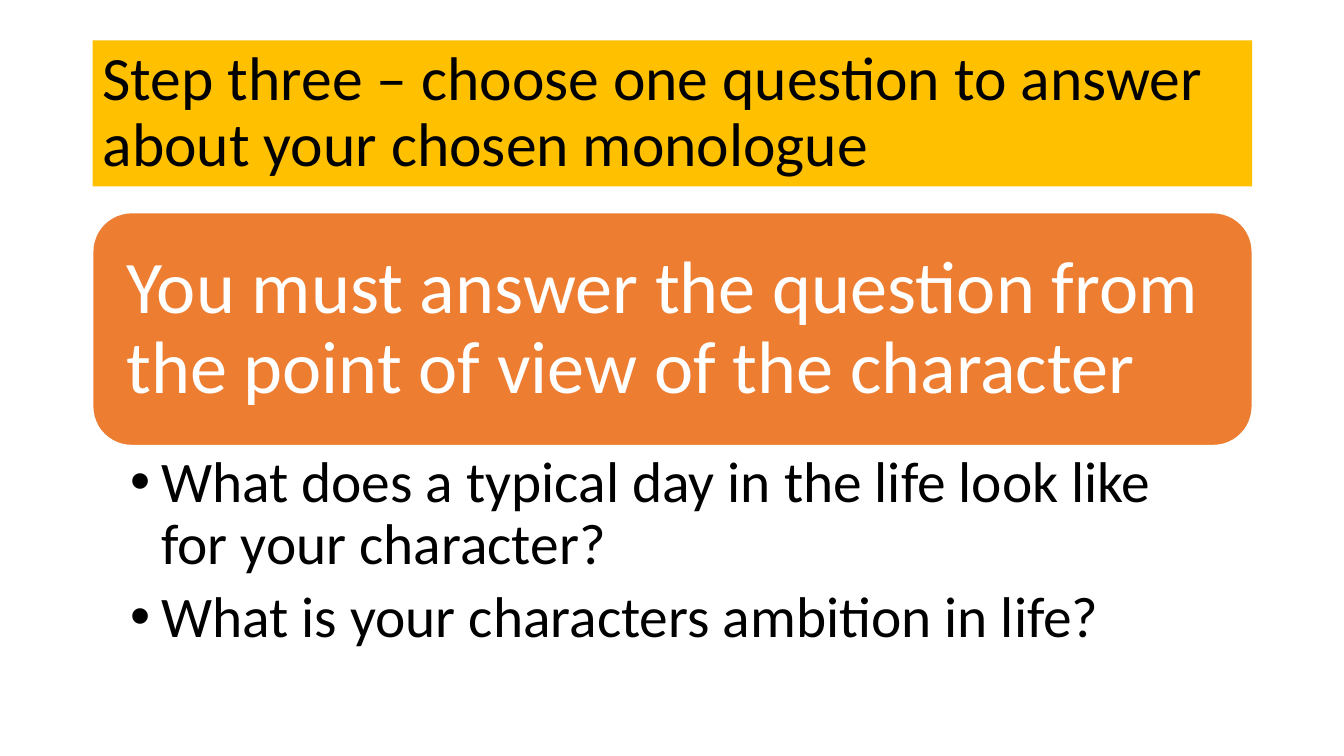
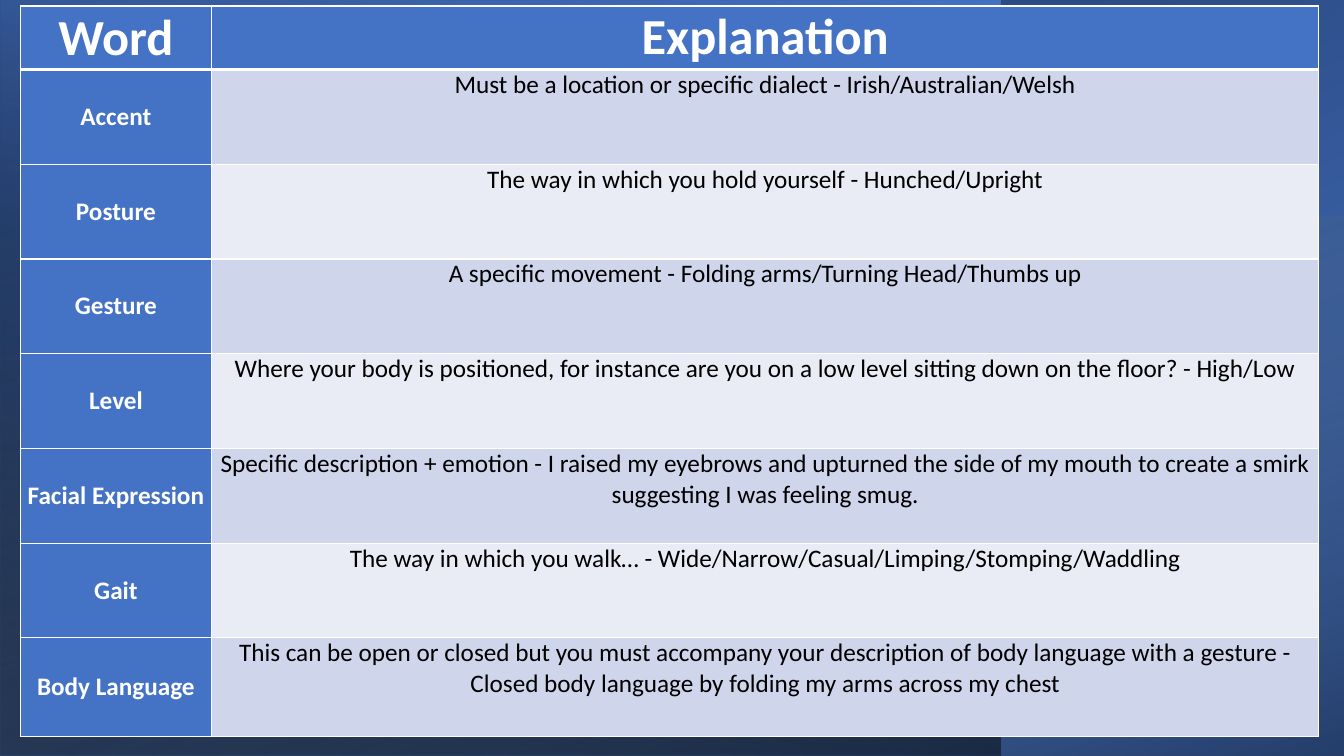
import pptx
import pptx.util
import pptx.dml.color
import pptx.enum.shapes
import pptx.enum.text
import pptx.oxml.ns
import lxml.etree

Inches = pptx.util.Inches
Pt = pptx.util.Pt
qn = pptx.oxml.ns.qn
SHAPE = pptx.enum.shapes.MSO_SHAPE
ALIGN = pptx.enum.text.PP_ALIGN
ANCHOR = pptx.enum.text.MSO_ANCHOR

FONT = "Calibri"
BLACK, WHITE = "000000", "FFFFFF"
GOLD, ORANGE = "FFC000", "ED7D31"
BLUE, NAVY, SKY = "4472C4", "203864", "9DC3E6"
BANDS = ["CFD5EA", "E9EBF5"]

TITLE = "Step three – choose one question to answer about your chosen monologue"
RULE = "You must answer the question from the point of view of the character"
ASKS = [
    "What does a typical day in the life look like for your character?",
    "What is your characters ambition in life?",
]
WORDS = [
    ("Word", "Explanation"),
    ("Accent", "Must be a location or specific dialect - Irish/Australian/Welsh"),
    ("Posture", "The way in which you hold yourself - Hunched/Upright"),
    ("Gesture", "A specific movement - Folding arms/Turning Head/Thumbs up"),
    ("Level", "Where your body is positioned, for instance are you on a low level "
              "sitting down on the floor? - High/Low"),
    ("Facial Expression", "Specific description + emotion - I raised my eyebrows and "
                          "upturned the side of my mouth to create a smirk "
                          "suggesting I was feeling smug."),
    ("Gait", "The way in which you walk… - Wide/Narrow/Casual/Limping/Stomping/Waddling"),
    ("Body Language", "This can be open or closed but you must accompany your "
                      "description of body language with a gesture - Closed body "
                      "language by folding my arms across my chest"),
]


def color(code):
    return pptx.dml.color.RGBColor.from_string(code)


def write(frame, lines, size, tint=BLACK, bold=False, align=ALIGN.LEFT,
          space=1.0, after=0, bullet=0):
    """Fill a text frame, one paragraph a line; bullet is the hanging indent."""
    frame.word_wrap = True
    for i, line in enumerate(lines):
        para = frame.paragraphs[0] if i == 0 else frame.add_paragraph()
        para.alignment = align
        para.line_spacing = space
        para.space_after = Pt(after)
        run = para.add_run()
        run.text = line
        run.font.name = FONT
        run.font.size = Pt(size)
        run.font.bold = bold
        run.font.color.rgb = color(tint)
        if bullet:
            props = para._p.get_or_add_pPr()
            props.set("marL", str(Inches(bullet)))
            props.set("indent", str(-Inches(bullet)))
            lxml.etree.SubElement(props, qn("a:buFont")).set("typeface", "Arial")
            lxml.etree.SubElement(props, qn("a:buChar")).set("char", "•")


def pad(frame, left, top, right, bottom):
    frame.margin_left, frame.margin_right = Inches(left), Inches(right)
    frame.margin_top, frame.margin_bottom = Inches(top), Inches(bottom)


def panel(slide, box, kind=SHAPE.RECTANGLE, fill=None):
    shape = slide.shapes.add_shape(kind, *map(Inches, box))
    shape.shadow.inherit = False
    shape.line.fill.background()
    if fill:
        shape.fill.solid()
        shape.fill.fore_color.rgb = color(fill)
    return shape


def shade(slide, box, turn, angle, stops):
    """Lay a turned, mirrored gradient; stops are (position, colour, opacity %)."""
    shape = panel(slide, box)
    shape.rotation = turn
    shape._element.spPr.find(qn("a:xfrm")).set("flipH", "1")
    shape.fill.gradient()
    shape.fill.gradient_angle = 360 - angle
    for stop, (place, code, _) in zip(shape.fill.gradient_stops, stops):
        stop.position = place
        stop.color.rgb = color(code)
    marks = shape._element.spPr.iter(qn("a:srgbClr"))
    for mark, (_, _, alpha) in zip(list(marks), stops):
        if alpha < 100:
            node = lxml.etree.SubElement(mark, qn("a:alpha"))
            node.set("val", str(alpha * 1000))


def border(cell, **widths):
    """Draw white cell edges; keys are L, R, T and B, in points."""
    props = cell._tc.get_or_add_tcPr()
    for i, side in enumerate("LRTB"):
        edge = lxml.etree.Element(qn("a:ln" + side), w=str(Pt(widths.get(side, 1))))
        fill = lxml.etree.SubElement(edge, qn("a:solidFill"))
        lxml.etree.SubElement(fill, qn("a:srgbClr")).set("val", WHITE)
        props.insert(i, edge)


def banner(slide, box, text):
    frame = panel(slide, box, fill=GOLD).text_frame
    frame.vertical_anchor = ANCHOR.MIDDLE
    write(frame, [text], 44, space=0.9)


def advice(slide, box, rule, asks):
    """Place the rounded rule box with its bulleted questions beneath."""
    left, top, width, height = box
    head = 2.31
    card = panel(slide, (left, top, width, head), SHAPE.ROUNDED_RECTANGLE, ORANGE)
    card.line.color.rgb = color(WHITE)
    card.line.width = Pt(1)
    frame = card.text_frame
    frame.vertical_anchor = ANCHOR.MIDDLE
    # The rounded corners add to the text inset
    pad(frame, 0.22, 0.22, 0.22, 0.22)
    write(frame, [rule], 53, WHITE, space=0.9)

    low = (left, top + head, width, height - head)
    frame = slide.shapes.add_textbox(*map(Inches, low)).text_frame
    pad(frame, 0.37, 0.07, 0.41, 0.07)
    write(frame, asks, 41, space=0.9, after=8, bullet=0.31)


def backdrop(slide, width, height):
    wide = ((width - height) / 2, (height - width) / 2, height, width)
    shade(slide, wide, 270, 200, [(0.08, BLUE, 100), (1, NAVY, 100)])
    shade(slide, (0, 0, 9.92, height), 180, 80, [(0.08, BLACK, 52), (1, BLUE, 100)])
    deep = 5.35
    base = ((width - deep) / 2, height - (deep + width) / 2, deep, width)
    shade(slide, base, 270, 20, [(0, SKY, 0), (1, BLACK, 46)])


def glossary(slide, box, rows):
    left, top, width, height = box
    shape = slide.shapes.add_table(len(rows), 2, *map(Inches, box))
    table = shape.table
    first, head, step = 1.9, 0.63, 0.94
    last = height - head - step * (len(rows) - 2)
    table.columns[0].width = Inches(first)
    table.columns[1].width = Inches(width - first)
    tall = [head] + [step] * (len(rows) - 2) + [last]
    for r, row in enumerate(rows):
        table.rows[r].height = Inches(tall[r])
        for c, text in enumerate(row):
            cell = table.cell(r, c)
            key = r == 0 or c == 0
            pad(cell, 0.06, 0, 0.06, 0)
            cell.vertical_anchor = ANCHOR.MIDDLE if c == 0 else ANCHOR.TOP
            cell.fill.solid()
            cell.fill.fore_color.rgb = color(BLUE if key else BANDS[(r - 1) % 2])
            border(cell, B=3 if r == 0 else 1, T=3 if r == 1 else 1)
            write(cell.text_frame, [text], 18 if r else 36,
                  WHITE if key else BLACK, bold=key, align=ALIGN.CENTER)


def main():
    deck = pptx.Presentation()
    width, height = 13.33, 7.5
    deck.slide_width, deck.slide_height = Inches(width), Inches(height)
    blank = deck.slide_layouts[6]

    task = deck.slides.add_slide(blank)
    banner(task, (0.92, 0.4, 11.5, 1.45), TITLE)
    advice(task, (0.92, 2.11, 11.5, 4.53), RULE, ASKS)

    terms = deck.slides.add_slide(blank)
    backdrop(terms, width, height)
    glossary(terms, (0.2, 0.06, 12.88, 7.25), WORDS)

    deck.save("out.pptx")


if __name__ == "__main__":
    main()
